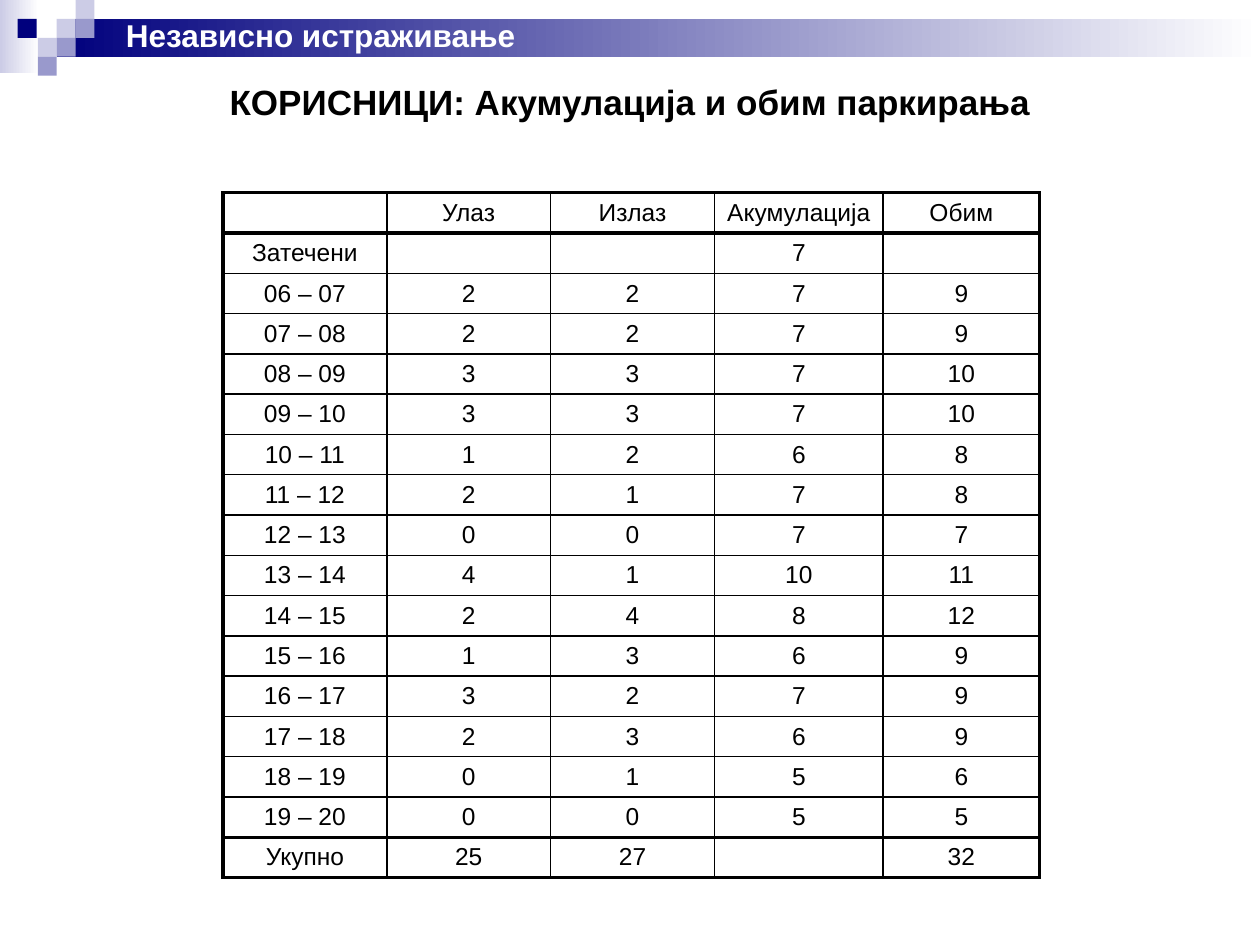
from lxml import etree
from pptx import Presentation
from pptx.dml.color import RGBColor
from pptx.enum.shapes import MSO_SHAPE
from pptx.enum.text import MSO_ANCHOR, MSO_AUTO_SIZE, PP_ALIGN
from pptx.oxml.ns import qn
from pptx.util import Inches, Pt

RECTANGLE = MSO_SHAPE.RECTANGLE
MIDDLE = MSO_ANCHOR.MIDDLE
GROW = MSO_AUTO_SIZE.SHAPE_TO_FIT_TEXT
CENTER, LEFT = PP_ALIGN.CENTER, PP_ALIGN.LEFT

NAVY, LILAC, VIOLET, WHITE, BLACK = "00007D", "CCCCE6", "9999CC", "FFFFFF", "000000"
THIN, THICK = Pt(1), Pt(2.25)
TILE = 0.15
TILES = [(0.45, 0.15, LILAC), (0.6, 0, LILAC), (0.6, 0.15, VIOLET), (0.3, 0.3, LILAC),
         (0.14, 0.15, NAVY), (0.45, 0.3, VIOLET), (0.3, 0.45, VIOLET)]
HEADER = ["", "Улаз", "Излаз", "Акумулација", "Обим"]
COLUMN_WIDTHS = [1.3, 1.3, 1.3, 1.34, 1.24]
FIRST_HOUR = 6
HOURLY = [(2, 2, 7, 9), (2, 2, 7, 9), (3, 3, 7, 10), (3, 3, 7, 10), (1, 2, 6, 8),
          (2, 1, 7, 8), (0, 0, 7, 7), (4, 1, 10, 11), (2, 4, 8, 12), (1, 3, 6, 9),
          (3, 2, 7, 9), (2, 3, 6, 9), (0, 1, 5, 6), (0, 0, 5, 5)]


def color(value):
    """Turn a hex string into a colour."""
    return RGBColor.from_string(value)


def set_format(target, values):
    """Set each attribute named in a dict of format values."""
    for name, value in values.items():
        setattr(target, name, value)


def write(paragraph, text, size, ink, bold=False, align=CENTER):
    """Write one formatted run into a paragraph."""
    paragraph.alignment = align
    run = paragraph.add_run()
    run.text = text
    set_format(run.font, {"name": "Arial", "size": Pt(size), "bold": bold})
    run.font.color.rgb = color(ink)


def add_block(group, box, *inks):
    """Add a rectangle with one flat colour or a two-colour gradient."""
    block = group.shapes.add_shape(RECTANGLE, *map(Inches, box))
    block.shadow.inherit = False
    block.line.fill.background()
    if len(inks) == 1:
        block.fill.solid()
        block.fill.fore_color.rgb = color(inks[0])
        return
    block.fill.gradient()
    block.fill.gradient_angle = 0
    for stop, ink, position in zip(block.fill.gradient_stops, inks, (0, 1)):
        stop.color.rgb = color(ink)
        stop.position = position


def add_banner(slide):
    """Add the gradient band and its tiles behind everything else."""
    banner = slide.shapes.add_group_shape()
    add_block(banner, (0, 0, 0.31, 0.58), LILAC, WHITE)
    add_block(banner, (0.45, 0.15, 9.55, 0.3), NAVY, WHITE)
    for left, top, ink in TILES:
        add_block(banner, (left, top, TILE, TILE), ink)
    slide.shapes._spTree.insert(2, banner._element)


def place_title(slide, box, text):
    """Move the title placeholder into its box and fill it."""
    title = slide.shapes.title
    set_format(title, dict(zip(("left", "top", "width", "height"), map(Inches, box))))
    title.text_frame.vertical_anchor = MIDDLE
    write(title.text_frame.paragraphs[0], text, 20, BLACK, bold=True)


def add_section_label(slide, box, text):
    """Add the section name on the band."""
    frame = slide.shapes.add_textbox(*map(Inches, box)).text_frame
    set_format(frame, {"word_wrap": True, "auto_size": GROW})
    write(frame.paragraphs[0], text, 18, WHITE, bold=True, align=LEFT)


def set_borders(cell, widths):
    """Draw the cell borders with the given widths by side."""
    properties = cell._tc.get_or_add_tcPr()
    for side, width in widths.items():
        line = etree.SubElement(properties, qn(f"a:ln{side}"), w=str(width))
        fill = etree.SubElement(line, qn("a:solidFill"))
        etree.SubElement(fill, qn("a:srgbClr"), val=BLACK)


def parking_rows():
    """List the table rows from the header to the totals."""
    hours = [[f"{hour:02} – {hour + 1:02}", *counts]
             for hour, counts in enumerate(HOURLY, FIRST_HOUR)]
    return [HEADER, ["Затечени", "", "", 7, ""], *hours, ["Укупно", 25, 27, "", 32]]


def add_parking_table(slide, left, top, row_height):
    """Add the hourly table with heavy lines around it, its header and its totals."""
    rows = parking_rows()
    last_row, last_column = len(rows) - 1, len(HEADER) - 1
    table = slide.shapes.add_table(
        len(rows), len(HEADER), Inches(left), Inches(top),
        Inches(sum(COLUMN_WIDTHS)), Inches(row_height * len(rows))).table
    set_format(table, {"first_row": False, "horz_banding": False})
    for column, width in zip(table.columns, COLUMN_WIDTHS):
        column.width = Inches(width)
    for r, row in enumerate(rows):
        table.rows[r].height = Inches(row_height)
        for c, value in enumerate(row):
            cell = table.cell(r, c)
            set_format(cell, {"margin_left": Inches(0.08), "margin_right": Inches(0.08),
                              "margin_top": Inches(0.04), "margin_bottom": Inches(0.04),
                              "vertical_anchor": MIDDLE})
            heavy = {"L": c == 0, "R": c == last_column,
                     "T": r in (0, 1, last_row), "B": r in (0, last_row - 1, last_row)}
            set_borders(cell, {side: THICK if on else THIN for side, on in heavy.items()})
            cell.fill.background()
            paragraph = cell.text_frame.paragraphs[0]
            if value == "":
                etree.SubElement(paragraph._p, qn("a:endParaRPr"), sz="1400")
            else:
                write(paragraph, str(value), 14, BLACK)


def main():
    """Build and save the slide."""
    deck = Presentation()
    deck.slide_width, deck.slide_height = Inches(10), Inches(7.5)
    slide = deck.slides.add_slide(deck.slide_layouts[5])
    add_banner(slide)
    place_title(slide, (0.5, 0.44, 9, 0.73), "КОРИСНИЦИ: Акумулација и обим паркирања")
    add_parking_table(slide, 1.77, 1.53, 0.32)
    add_section_label(slide, (0.9, 0.08, 5.59, 0.4), "Независно истраживање")
    deck.save("out.pptx")


if __name__ == "__main__":
    main()
